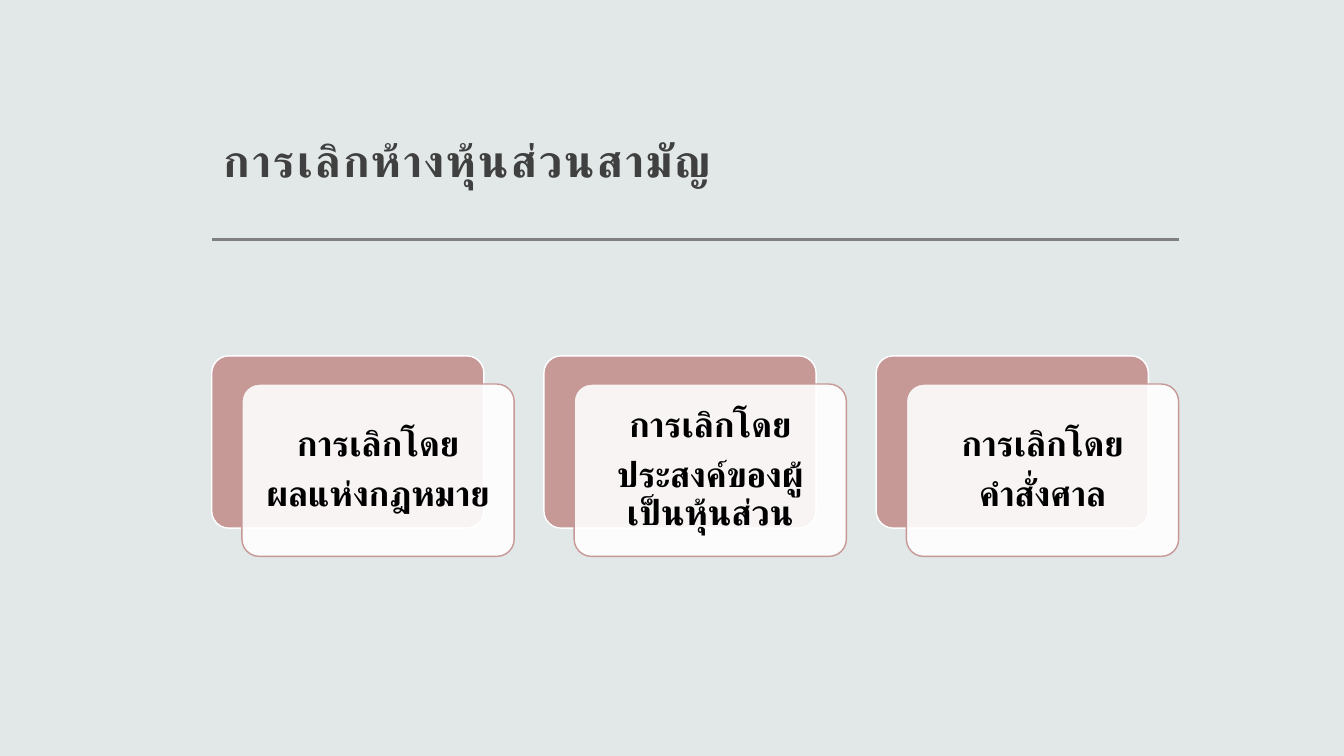
from lxml.etree import SubElement
from pptx import Presentation
from pptx.dml.color import RGBColor as RGB
from pptx.enum.shapes import MSO_CONNECTOR as CONN, MSO_SHAPE as SHAPE
from pptx.enum.text import MSO_ANCHOR as ANCHOR, MSO_AUTO_SIZE as AUTO, PP_ALIGN as ALIGN
from pptx.oxml.ns import qn
from pptx.util import Inches, Pt

COLORS = {"bg": "E2E8E8", "title": "404040", "rule": "808080",
          "rose": "C69896", "white": "FFFFFF", "text": "000000"}
CARDS = [
    ["การเลิกโดย", "ผลแห่งกฎหมาย"],
    ["การเลิกโดย", "ประสงค์ของผู้เป็นหุ้นส่วน"],
    ["การเลิกโดย", "คำสั่งศาล"],
]
LEFT, TOP, WIDTH, HEIGHT = 2.1, 3.53, 2.7, 1.71
PITCH, SHIFT_X, SHIFT_Y = 3.295, 0.3, 0.28


class Deck:
    """Holds the font, the colours and the current slide."""

    def __init__(self, prs, font):
        self.font = font
        self.s = prs.slides.add_slide(prs.slide_layouts[5])
        fill = self.s.background.fill
        fill.solid()
        fill.fore_color.rgb = self.color("bg")

    def color(self, name):
        return RGB.from_string(COLORS[name])

    def style(self, p, size, color, spacing):
        p.line_spacing = spacing
        for r in p.runs:
            r.font.name = self.font
            r.font.size = Pt(size)
            r.font.bold = True
            r.font.color.rgb = self.color(color)
            SubElement(r.font._element, qn("a:cs")).set("typeface", self.font)

    def frame(self, tf, anchor, inset, bottom):
        tf.word_wrap = True
        tf.auto_size = AUTO.NONE
        tf.vertical_anchor = anchor
        tf.margin_left = tf.margin_right = tf.margin_top = Inches(inset)
        tf.margin_bottom = Inches(bottom)

    def title(self, text, x, y, w, h):
        sp = self.s.shapes.title
        sp.left, sp.top, sp.width, sp.height = (Inches(v) for v in (x, y, w, h))
        tf = sp.text_frame
        tf.text = text
        self.frame(tf, ANCHOR.BOTTOM, 0.12, 0.1)
        p = tf.paragraphs[0]
        p.alignment = ALIGN.LEFT
        self.style(p, 32, "title", 1.3)
        p.runs[0].font._element.set("spc", "150")

    def rule(self, x1, x2, y):
        c = self.s.shapes.add_connector(
            CONN.STRAIGHT, Inches(x1), Inches(y), Inches(x2), Inches(y))
        c.line.color.rgb = self.color("rule")
        c.line.width = Pt(2)
        SubElement(c._element.spPr, qn("a:effectLst"))

    def panel(self, x, y, fill, line, opacity=100):
        sp = self.s.shapes.add_shape(
            SHAPE.ROUNDED_RECTANGLE, Inches(x), Inches(y), Inches(WIDTH), Inches(HEIGHT))
        sp.adjustments[0] = 0.1
        sp.shadow.inherit = False
        sp.fill.solid()
        sp.fill.fore_color.rgb = self.color(fill)
        sp.line.color.rgb = self.color(line)
        sp.line.width = Pt(1)
        if opacity < 100:
            clr = sp._element.spPr.find(qn("a:solidFill"))[0]
            SubElement(clr, qn("a:alpha")).set("val", str(opacity * 1000))
        return sp

    def card(self, x, y, lines):
        self.panel(x, y, "rose", "white")
        sp = self.panel(x + SHIFT_X, y + SHIFT_Y, "white", "rose", 90)
        tf = sp.text_frame
        tf.text = "\n".join(lines)
        self.frame(tf, ANCHOR.MIDDLE, 0.1, 0.1)
        for p in tf.paragraphs:
            p.alignment = ALIGN.CENTER
            p.space_after = Pt(8.75)
            self.style(p, 25, "text", 0.9)


def main():
    prs = Presentation()
    prs.slide_width, prs.slide_height = Inches(13.33), Inches(7.5)
    deck = Deck(prs, "Roboto")
    deck.rule(LEFT, 11.69, 2.38)
    deck.title("การเลิกห้างหุ้นส่วนสามัญ", LEFT, 0.48, 9.59, 1.47)
    for i, lines in enumerate(CARDS):
        deck.card(LEFT + i * PITCH, TOP, lines)
    prs.save("out.pptx")


if __name__ == "__main__":
    main()
